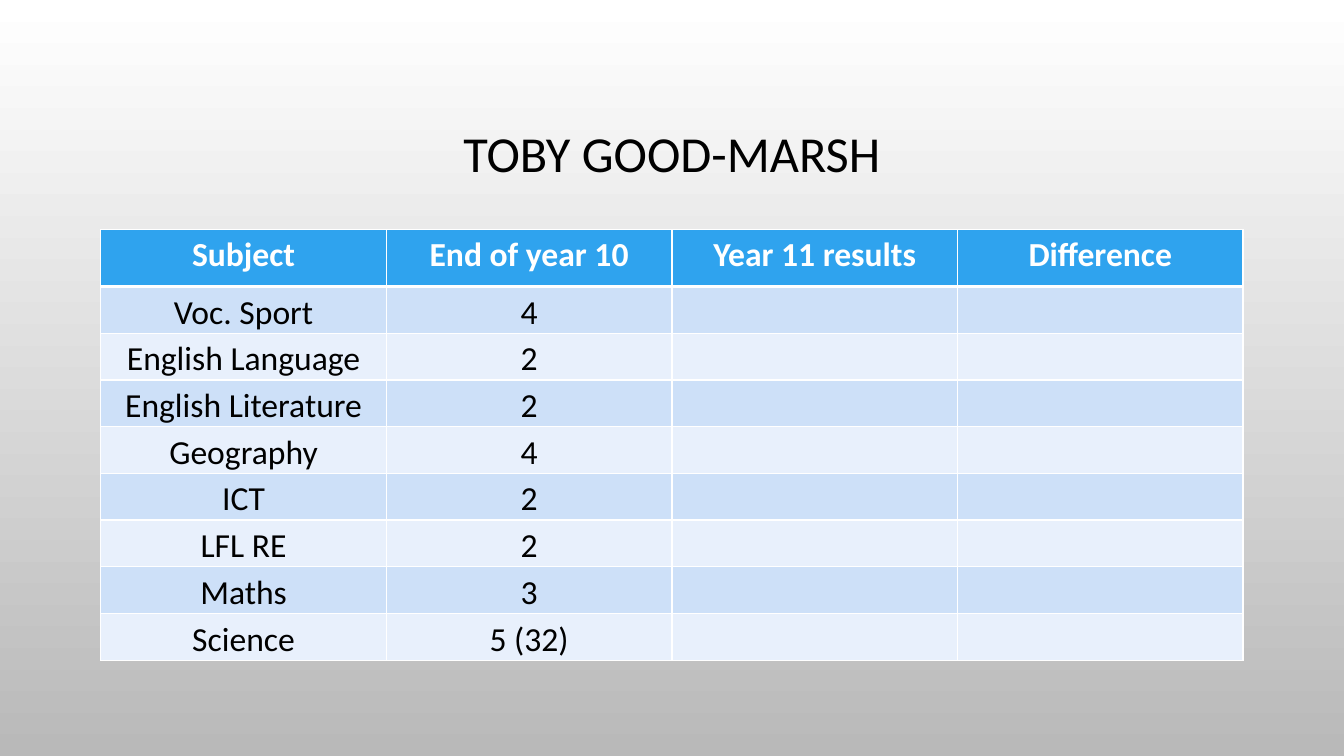
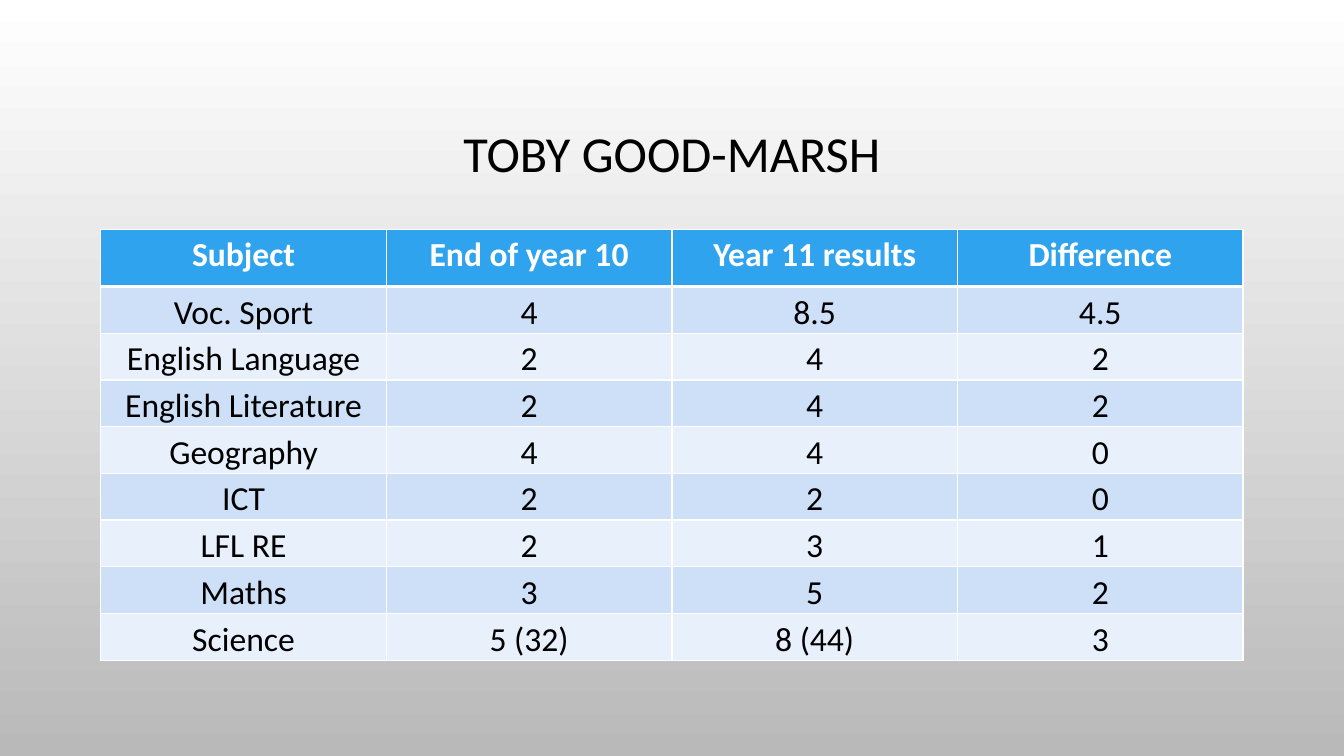
from dataclasses import dataclass

from lxml.etree import SubElement
from pptx import Presentation
from pptx.dml.color import RGBColor
from pptx.enum.text import MSO_ANCHOR, PP_ALIGN
from pptx.oxml.ns import qn
from pptx.util import Inches, Pt


@dataclass(frozen=True)
class Theme:
    font: str = "Calibri"
    title_size: int = 36
    table_size: int = 24
    text: str = "000000"
    white: str = "FFFFFF"
    shade: str = "B9B9B9"
    header: str = "2FA3EE"
    bands: tuple = ("CDE0F8", "E8F0FC")
    line: int = 1
    header_line: int = 3


THEME = Theme()
WIDTH, HEIGHT = Inches(13.33), Inches(7.5)
COLUMNS, ROWS = 40, 100  # layout grid over the whole slide
LEFT, SPAN = 3, 34
TITLE_TOP, TITLE_ROWS = 9, 23.4
TABLE_TOP, HEADER_ROWS, BODY_ROWS = 30.4, 7.5, 6.18

NAME = "TOBY GOOD-MARSH"
HEADINGS = ("Subject", "End of year 10", "Year 11 results", "Difference")
RESULTS = (
    ("Voc. Sport", "4", "8.5", "4.5"),
    ("English Language", "2", "4", "2"),
    ("English Literature", "2", "4", "2"),
    ("Geography", "4", "4", "0"),
    ("ICT", "2", "2", "0"),
    ("LFL RE", "2", "3", "1"),
    ("Maths", "3", "5", "2"),
    ("Science", "5 (32)", "8 (44)", "3"),
)


def across(n):
    return round(WIDTH * n / COLUMNS)


def down(n):
    return round(HEIGHT * n / ROWS)


def rgb(value):
    return RGBColor.from_string(value)


def write(tf, text, size, color, bold=False):
    p = tf.paragraphs[0]
    p.alignment = PP_ALIGN.CENTER
    r = p.add_run()
    r.text = text
    r.font.name, r.font.size, r.font.bold = THEME.font, Pt(size), bold
    r.font.color.rgb = rgb(color)
    return p


def add_slide(prs):
    s = prs.slides.add_slide(prs.slide_layouts[6])
    fill = s.background.fill
    fill.gradient()
    fill.gradient_angle = 270  # counter-clockwise, so it runs downwards
    for stop, color, position in zip(
        fill.gradient_stops, (THEME.white, THEME.shade), (0, 1)
    ):
        stop.color.rgb = rgb(color)
        stop.position = position
    return s


def add_title(s, text):
    sp = s.shapes.add_textbox(
        across(LEFT), down(TITLE_TOP), across(SPAN), down(TITLE_ROWS)
    )
    tf = sp.text_frame
    tf.word_wrap = True
    tf.vertical_anchor = MSO_ANCHOR.MIDDLE
    write(tf, text, THEME.title_size, THEME.text).line_spacing = 0.9


def set_borders(cell, top, bottom):
    """Outline a cell in white; its fill must be set afterwards."""
    tc_pr = cell._tc.get_or_add_tcPr()
    sides = {"L": THEME.line, "R": THEME.line, "T": top, "B": bottom}
    for side, width in sides.items():
        ln = SubElement(tc_pr, qn(f"a:ln{side}"), w=str(Pt(width)))
        solid = SubElement(ln, qn("a:solidFill"))
        SubElement(solid, qn("a:srgbClr"), val=THEME.white)


def paint(cell, color):
    cell.fill.solid()
    cell.fill.fore_color.rgb = rgb(color)


def header_cell(cell, text):
    set_borders(cell, THEME.line, THEME.header_line)
    paint(cell, THEME.header)
    write(cell.text_frame, text, THEME.table_size, THEME.white, bold=True)


def body_cell(cell, text, row):
    set_borders(cell, THEME.header_line if row == 0 else THEME.line, THEME.line)
    paint(cell, THEME.bands[row % len(THEME.bands)])
    cell.vertical_anchor = MSO_ANCHOR.BOTTOM
    cell.margin_left = cell.margin_right = cell.margin_top = Inches(0.01)
    cell.margin_bottom = 0
    if text:
        write(cell.text_frame, text, THEME.table_size, THEME.text)


def add_results(s, results, shown):
    """Tabulate the results, filling in only the first `shown` columns."""
    table = s.shapes.add_table(
        len(results) + 1, len(HEADINGS),
        across(LEFT), down(TABLE_TOP), across(SPAN),
        down(HEADER_ROWS + BODY_ROWS * len(results)),
    ).table
    table.horz_banding = False
    for i, row in enumerate(table.rows):
        row.height = down(BODY_ROWS if i else HEADER_ROWS)
    for j, heading in enumerate(HEADINGS):
        header_cell(table.cell(0, j), heading)
        for i, result in enumerate(results):
            body_cell(table.cell(i + 1, j), result[j] if j < shown else "", i)


def main():
    prs = Presentation()
    prs.slide_width, prs.slide_height = WIDTH, HEIGHT
    for shown in (2, len(HEADINGS)):
        s = add_slide(prs)
        add_title(s, NAME)
        add_results(s, RESULTS, shown)
    prs.save("out.pptx")


if __name__ == "__main__":
    main()
